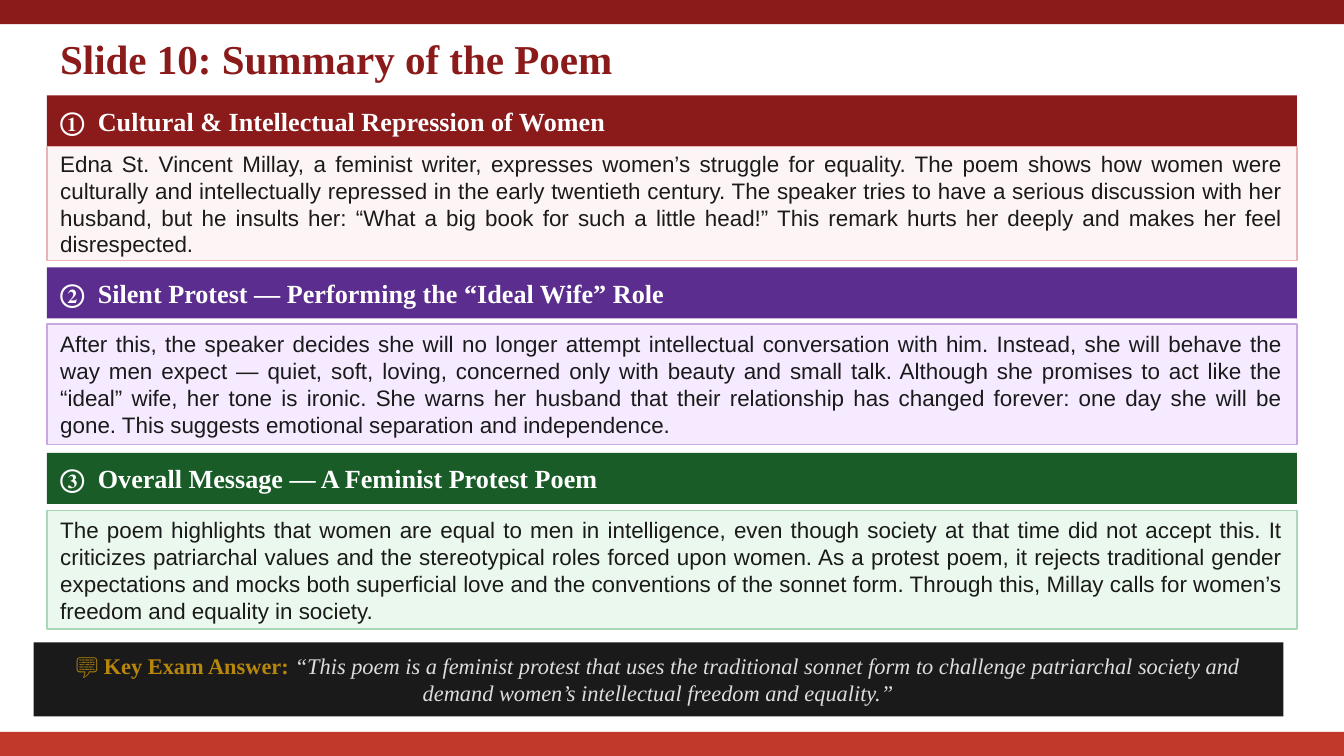
"""Build the poem summary slide with three banded sections and a key answer."""
from dataclasses import dataclass

from lxml import etree
from pptx import Presentation
from pptx.dml.color import RGBColor
from pptx.enum.shapes import MSO_SHAPE
from pptx.enum.text import MSO_ANCHOR, PP_ALIGN
from pptx.oxml.ns import qn
from pptx.shapes.base import BaseShape
from pptx.slide import Slide
from pptx.util import Inches, Pt

RECT = MSO_SHAPE.RECTANGLE
MIDDLE = MSO_ANCHOR.MIDDLE
LEFT, CENTER, JUSTIFY = PP_ALIGN.LEFT, PP_ALIGN.CENTER, PP_ALIGN.JUSTIFY


@dataclass(frozen=True)
class Theme:
    serif: str = "Times New Roman"
    sans: str = "Arial"
    red: str = "8B1A1A"
    brick: str = "C0392B"
    ink: str = "1A1A1A"
    white: str = "FFFFFF"
    gold: str = "B7860B"
    silver: str = "DDDDDD"
    title: int = 22
    head: int = 14
    body: int = 12
    line: float = 0.75


@dataclass(frozen=True)
class Box:
    left: float
    top: float
    width: float
    height: float

    def place(self) -> tuple:
        return tuple(Inches(n) for n in (self.left, self.top, self.width, self.height))


@dataclass(frozen=True)
class Section:
    mark: str
    head: str
    body: str
    top: float
    start: float
    height: float
    dark: str
    pale: str
    edge: str


THEME = Theme()
SIDE, WIDE, BAND, EDGE = 0.35, 9.3, 0.38, 0.18
PAGE_W = 10
PAGE_H = PAGE_W * 9 / 16

SECTIONS = (
    Section(
        "①", "Cultural & Intellectual Repression of Women",
        "Edna St. Vincent Millay, a feminist writer, expresses women’s struggle for "
        "equality. The poem shows how women were culturally and intellectually repressed "
        "in the early twentieth century. The speaker tries to have a serious discussion "
        "with her husband, but he insults her: “What a big book for such a little head!” "
        "This remark hurts her deeply and makes her feel disrespected.",
        0.71, 1.09, 0.85, THEME.red, "FDF5F5", "E8B4B4"),
    Section(
        "②", "Silent Protest — Performing the “Ideal Wife” Role",
        "After this, the speaker decides she will no longer attempt intellectual "
        "conversation with him. Instead, she will behave the way men expect — quiet, "
        "soft, loving, concerned only with beauty and small talk. Although she promises "
        "to act like the “ideal” wife, her tone is ironic. She warns her husband that "
        "their relationship has changed forever: one day she will be gone. This suggests "
        "emotional separation and independence.",
        1.99, 2.41, 0.9, "5B2D8E", "F5EAFF", "C8A8E0"),
    Section(
        "③", "Overall Message — A Feminist Protest Poem",
        "The poem highlights that women are equal to men in intelligence, even though "
        "society at that time did not accept this. It criticizes patriarchal values and "
        "the stereotypical roles forced upon women. As a protest poem, it rejects "
        "traditional gender expectations and mocks both superficial love and the "
        "conventions of the sonnet form. Through this, Millay calls for women’s freedom "
        "and equality in society.",
        3.37, 3.8, 0.88, "1A5C28", "EAF8ED", "A8D8B8"),
)


def add_rect(slide: Slide, box: Box, fill: str, edge: str = "") -> BaseShape:
    """Draw a flat rectangle, outlined when an edge colour is given."""
    shape = slide.shapes.add_shape(RECT, *box.place())
    shape.shadow.inherit = False
    shape.fill.solid()
    shape.fill.fore_color.rgb = RGBColor.from_string(fill)
    if edge:
        shape.line.color.rgb = RGBColor.from_string(edge)
        shape.line.width = Pt(THEME.line)
    else:
        shape.line.fill.background()
    return shape


def add_text(shape: BaseShape, text: str, *, size: float, color: str,
             font: str = THEME.serif, bold: bool = False, italic: bool = False,
             align: PP_ALIGN = LEFT, pad_x: float = 0.1, pad_y: float = 0.05,
             tab: float = 0) -> None:
    """Append a formatted run to the first paragraph of a shape."""
    frame = shape.text_frame
    frame.word_wrap = True
    frame.vertical_anchor = MIDDLE
    frame.margin_left = frame.margin_right = Inches(pad_x)
    frame.margin_top = frame.margin_bottom = Inches(pad_y)
    para = frame.paragraphs[0]
    para.alignment = align
    if tab:
        stops = etree.SubElement(para._p.get_or_add_pPr(), qn("a:tabLst"))
        etree.SubElement(stops, qn("a:tab"), pos=str(Inches(tab)), algn="l")
    run = para.add_run()
    run.text = text
    run.font.name = font
    run.font.size = Pt(size)
    run.font.bold = bold
    run.font.italic = italic
    run.font.color.rgb = RGBColor.from_string(color)


def add_section(slide: Slide, part: Section) -> None:
    """Draw a heading band and the text panel under it."""
    band = add_rect(slide, Box(SIDE, part.top, WIDE, BAND), part.dark)
    add_text(band, f"{part.mark}\t{part.head}", size=THEME.head,
             color=THEME.white, bold=True, tab=0.28)
    panel = add_rect(slide, Box(SIDE, part.start, WIDE, part.height),
                     part.pale, part.edge)
    add_text(panel, part.body, size=THEME.body, color=THEME.ink,
             font=THEME.sans, align=JUSTIFY, pad_y=0.07)


def add_answer(slide: Slide) -> None:
    """Draw the dark bar with the key exam answer."""
    bar = add_rect(slide, Box(0.25, 4.78, WIDE, 0.55), THEME.ink)
    form = dict(size=THEME.body, align=CENTER, pad_x=0.12, pad_y=0.07)
    add_text(bar, "💬 Key Exam Answer: ", color=THEME.gold, bold=True, **form)
    add_text(bar, "“This poem is a feminist protest that uses the traditional sonnet "
             "form to challenge patriarchal society and demand women’s intellectual "
             "freedom and equality.”", color=THEME.silver, italic=True, **form)


def main() -> None:
    """Compose and save the slide."""
    deck = Presentation()
    deck.slide_width, deck.slide_height = Inches(PAGE_W), Inches(PAGE_H)
    slide = deck.slides.add_slide(deck.slide_layouts[6])
    add_rect(slide, Box(0, 0, PAGE_W, EDGE), THEME.red)
    add_rect(slide, Box(0, PAGE_H - EDGE, PAGE_W, EDGE), THEME.brick)
    title = slide.shapes.add_textbox(*Box(SIDE, 0.22, WIDE, 0.42).place())
    add_text(title, "Slide 10: Summary of the Poem", size=THEME.title,
             color=THEME.red, bold=True)
    for part in SECTIONS:
        add_section(slide, part)
    add_answer(slide)
    deck.save("out.pptx")


if __name__ == "__main__":
    main()
